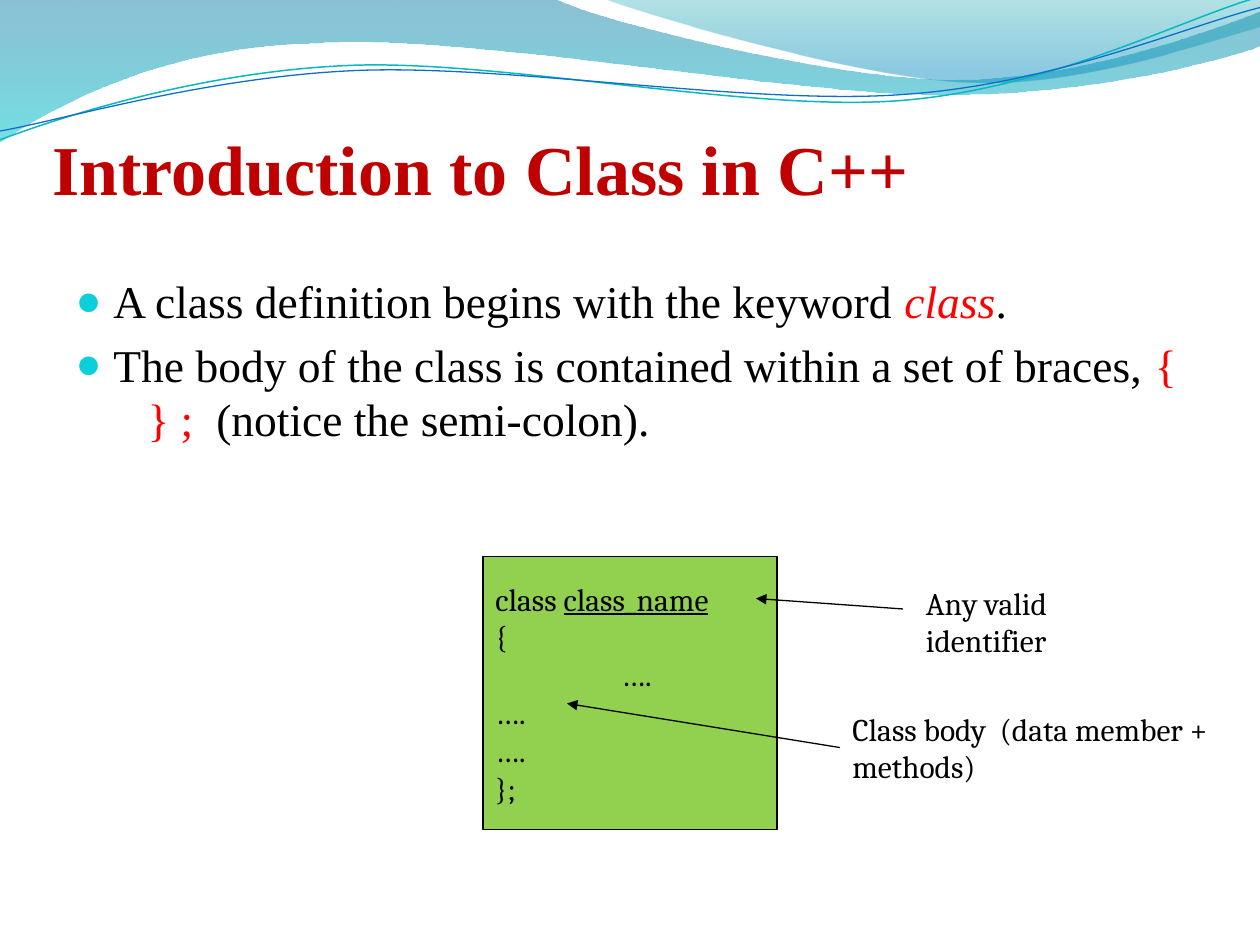
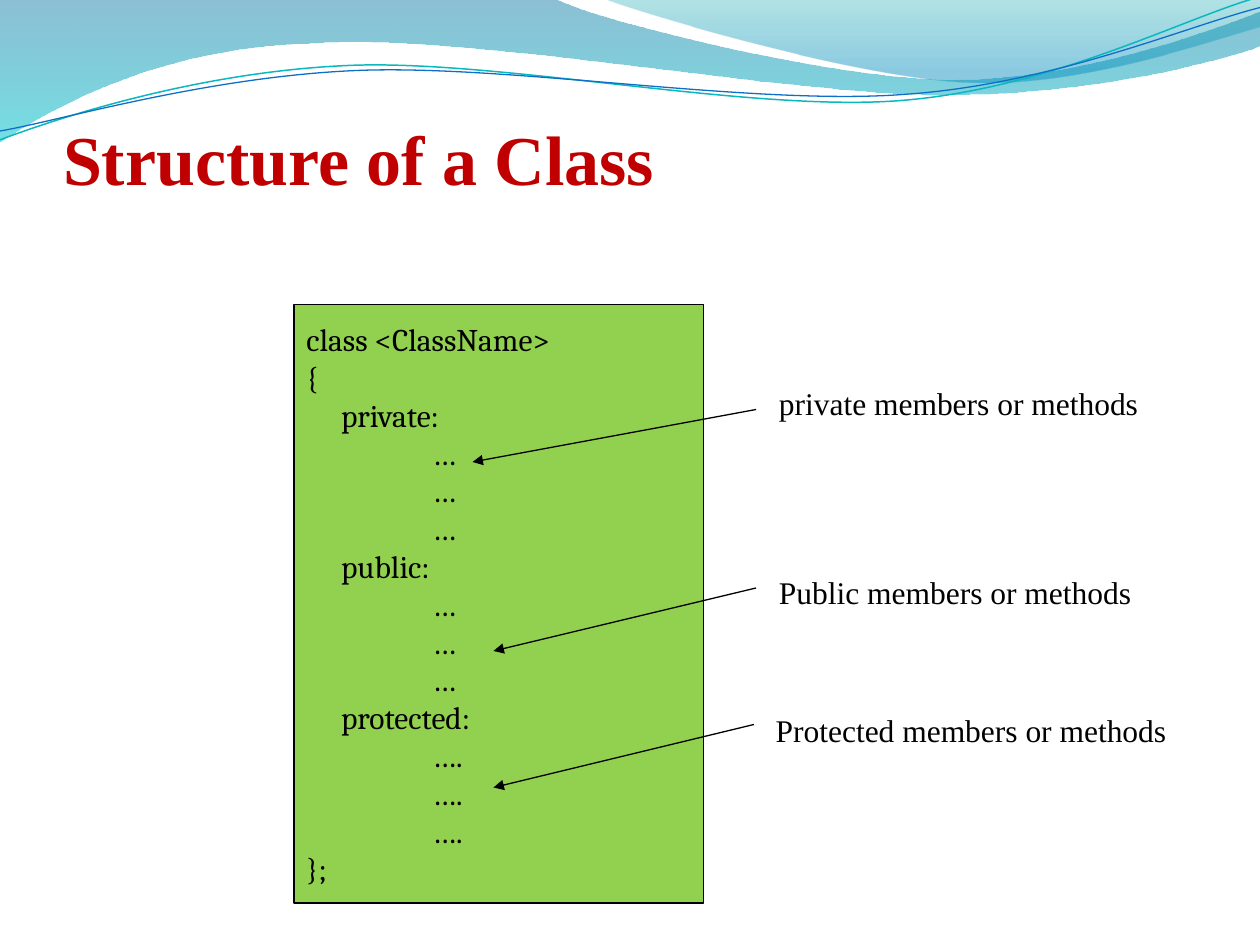
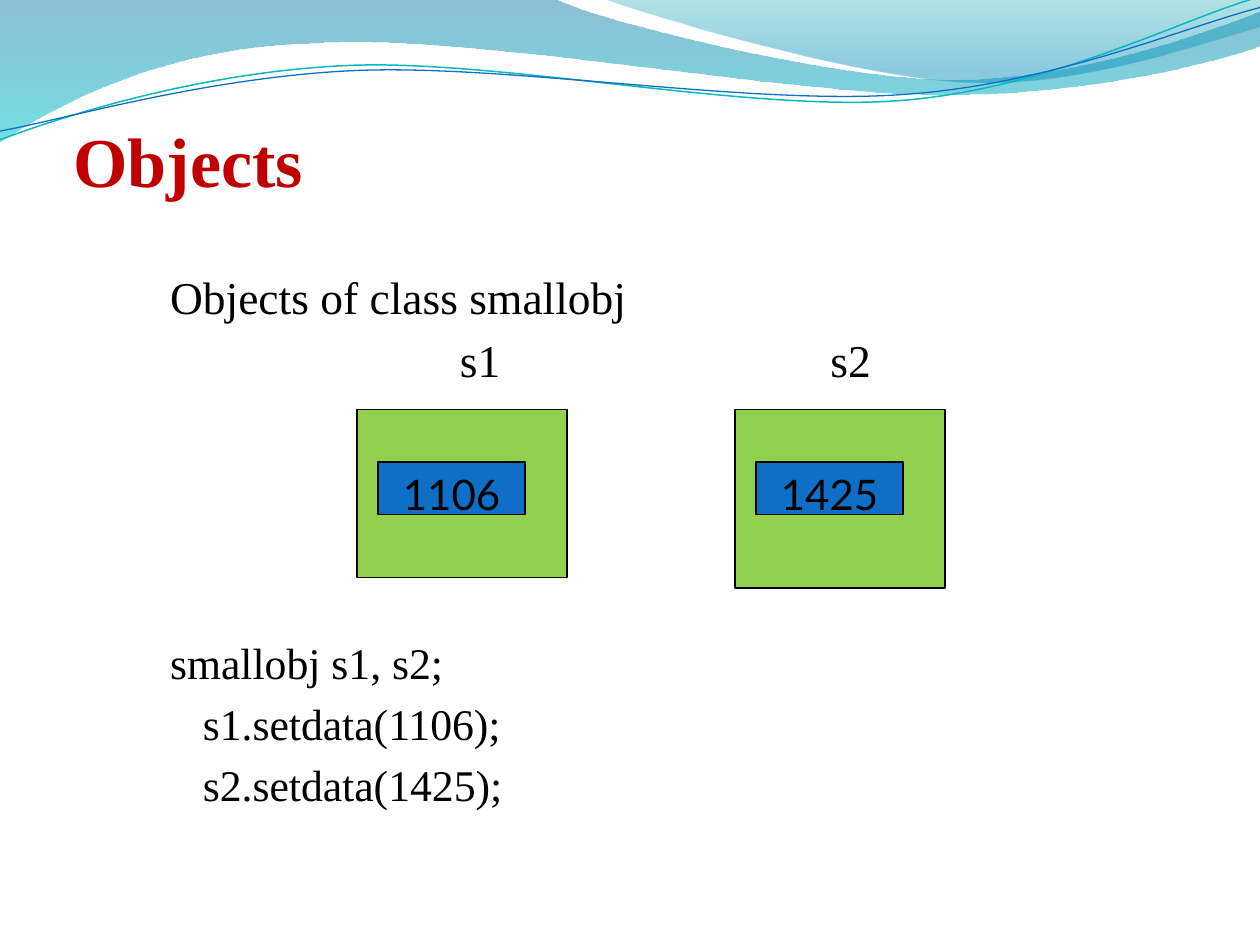
from typing import NamedTuple, Optional

from lxml import etree
from pptx import Presentation
from pptx.dml.color import RGBColor
from pptx.enum.shapes import MSO_CONNECTOR as Connector, MSO_SHAPE as Preset
from pptx.enum.text import MSO_ANCHOR as Anchor, MSO_AUTO_SIZE as AutoSize, PP_ALIGN as Align
from pptx.oxml.ns import qn
from pptx.util import Emu, Inches, Pt

# Shared look
SERIF, CODE_FONT, NUMBER_FONT = "Times New Roman", "Cambria", "Lato"
BLACK, WHITE, RED, TITLE_RED = "000000", "FFFFFF", "FF0000", "C00000"
GREEN, BLUE, TEAL, AQUA = "92D050", "0F6FC6", "0AB8BF", "0BD0D9"
CELL = Inches(1) // 12  # the slide is a grid of 120 columns by 90 rows
COLUMNS, ROWS = 120, 90


class Area(NamedTuple):
    """Column, row, width and height in grid cells."""
    column: float
    row: float
    width: float
    height: float


class Style(NamedTuple):
    size: float
    font: str = SERIF
    color: str = BLACK
    bold: bool = False
    italic: bool = False
    underline: bool = False


class Wave(NamedTuple):
    """Segments hold one point (line) or three points (curve), in inches."""
    start: tuple
    segments: list
    stops: tuple = ()  # position, colour, opacity in percent
    line: Optional[str] = None
    line_width: float = 0


class Label(NamedTuple):
    text: str
    area: Area
    font: str


class Arrow(NamedTuple):
    start: tuple
    end: tuple


class Box(NamedTuple):
    area: Area
    fill: str
    line: str = BLACK
    line_width: float = 0.75


class Line(NamedTuple):
    """A body paragraph: (text, style) runs, indents and tab size in inches."""
    runs: list
    left: float = 0
    hanging: float = 0
    tab_size: float = 1
    bullet: bool = False


WAVES = [
    Wave((0, 0), [
        (4.4, -0.01), (4.76, 0.17, 6.64, 0.63, 7.58, 0.63), (8.53, 0.63, 9.58, 0.26, 10, 0.09),
        (10.01, 0.36), (9.83, 0.44, 8.7, 0.76, 7.46, 0.75), (6.22, 0.75, 3.82, 0.28, 2.57, 0.34),
        (1.29, 0.36, 0.46, 0.83, -0.01, 1.13)],
        stops=((0, "0074A1", 45), (1, "00C6CF", 55))),
    Wave((4.79, -0.01), [
        (5.09, 0.11, 6.82, 0.62, 7.69, 0.65), (8.56, 0.69, 9.61, 0.32, 10, 0.21), (10, 0)],
        stops=((0, "00A1A9", 30), (0.8, "008BBF", 45))),
    Wave((0, 1.11), [
        (0.48, 0.93, 1.58, 0.57, 2.77, 0.52), (3.95, 0.47, 5.93, 0.89, 7.13, 0.8),
        (8.33, 0.71, 9.38, 0.15, 9.98, -0.02)], line=TEAL, line_width=0.85),
    Wave((0, 1.04), [
        (0.47, 0.96, 1.64, 0.61, 2.83, 0.56), (4.03, 0.51, 5.97, 0.84, 7.17, 0.75),
        (8.36, 0.67, 9.41, 0.21, 10, 0.06)], line=BLUE, line_width=0.75),
]


# Helpers
def rgb(color: str) -> RGBColor:
    return RGBColor.from_string(color)


def cells(*values: float) -> list:
    return [Emu(round(value * CELL)) for value in values]


def add_element(parent, tag: str, **attributes):
    return etree.SubElement(parent, qn(tag), attributes)


def format_run(run, style: Style) -> None:
    font = run.font
    font.name, font.size = style.font, Pt(style.size)
    font.bold, font.italic, font.underline = style.bold, style.italic, style.underline
    font.color.rgb = rgb(style.color)


def write(text_frame, text: str, style: Style, align=Align.LEFT) -> None:
    text_frame.text = text
    for paragraph in text_frame.paragraphs:
        paragraph.alignment = align
        for run in paragraph.runs:
            format_run(run, style)


def set_tab_size(paragraph, inches: float) -> None:
    paragraph._p.get_or_add_pPr().set("defTabSz", str(Inches(inches)))


def place(shape, area: Area) -> None:
    shape.left, shape.top, shape.width, shape.height = cells(*area)


# Waves on the slide master
def bend_segments(shape, segments: list) -> None:
    """Turn every three straight steps of a curved segment into one curve."""
    steps = iter(list(shape.element.iter(qn("a:lnTo"))))
    for segment in segments:
        group = [next(steps) for _ in range(len(segment) // 2)]
        if len(group) == 3:
            curve = etree.Element(qn("a:cubicBezTo"))
            group[0].addprevious(curve)
            for step in group:
                curve.append(step[0])
                step.getparent().remove(step)


def draw_wave(slide, wave: Wave):
    scaled = [[value * 1000 for value in segment] for segment in wave.segments]
    points = [point for segment in scaled for point in zip(segment[::2], segment[1::2])]
    builder = slide.shapes.build_freeform(
        *(value * 1000 for value in wave.start), scale=Inches(1) / 1000)
    builder.add_line_segments(points, close=bool(wave.stops))
    shape = builder.convert_to_shape()
    bend_segments(shape, wave.segments)
    shape.shadow.inherit = False
    if wave.line:
        shape.fill.background()
        shape.line.color.rgb = rgb(wave.line)
        shape.line.width = Pt(wave.line_width)
        return shape
    shape.fill.gradient()
    shape.fill.gradient_angle = 270
    for stop, (position, color, _) in zip(shape.fill.gradient_stops, wave.stops):
        stop.position, stop.color.rgb = position, rgb(color)
    for color_element, (_, _, opacity) in zip(shape.element.iter(qn("a:srgbClr")), wave.stops):
        add_element(color_element, "a:alpha", val=str(opacity * 1000))
    shape.line.fill.background()
    return shape


def put_waves_on_master(presentation, slide) -> None:
    master_tree = presentation.slide_master.shapes.element
    for index, wave in enumerate(WAVES):
        element = draw_wave(slide, wave).element
        element.nvSpPr.cNvPr.set("id", str(100 + index))
        master_tree.insert(2 + index, element)


# Slide parts
def add_titled_slide(presentation, layout: int, title: str, area: Area):
    slide = presentation.slides.add_slide(presentation.slide_layouts[layout])
    shape = slide.shapes.title
    place(shape, area)
    frame = shape.text_frame
    write(frame, title, Style(40, color=TITLE_RED, bold=True))
    frame.auto_size = AutoSize.NONE
    frame.vertical_anchor = Anchor.BOTTOM
    frame.margin_left = frame.margin_right = frame.margin_bottom = 0
    frame.margin_top = Inches(0.05)
    return slide


def fill_body(slide, area: Area, lines: list) -> list:
    shape = slide.placeholders[1]
    place(shape, area)
    frame = shape.text_frame
    frame.auto_size = AutoSize.NONE
    for index, line in enumerate(lines):
        paragraph = frame.add_paragraph() if index else frame.paragraphs[0]
        set_tab_size(paragraph, line.tab_size)
        properties = paragraph._p.pPr
        properties.set("marL", str(Inches(line.left)))
        properties.set("indent", str(-Inches(line.hanging)))
        if line.bullet:
            add_element(add_element(properties, "a:buClr"), "a:srgbClr", val=AQUA)
            add_element(properties, "a:buSzPct", val="95000")
            add_element(properties, "a:buChar", char="●")
        else:
            add_element(properties, "a:buNone")
        for text, style in line.runs:
            run = paragraph.add_run()
            run.text = text
            format_run(run, style)
    frame.paragraphs[0].space_before = Pt(0)
    return list(frame.paragraphs)


def add_box(slide, box: Box):
    shape = slide.shapes.add_shape(Preset.RECTANGLE, *cells(*box.area))
    shape.shadow.inherit = False
    shape.fill.solid()
    shape.fill.fore_color.rgb = rgb(box.fill)
    shape.line.color.rgb = rgb(box.line)
    shape.line.width = Pt(box.line_width)
    return shape


def add_code(slide, area: Area, code: str):
    frame = add_box(slide, Box(area, GREEN)).text_frame
    frame.vertical_anchor = Anchor.MIDDLE
    write(frame, code, Style(18, CODE_FONT))
    for paragraph in frame.paragraphs:
        set_tab_size(paragraph, 1)
    return frame


def add_label(slide, label: Label):
    shape = slide.shapes.add_textbox(*cells(*label.area))
    shape.text_frame.word_wrap = True
    write(shape.text_frame, label.text, Style(18, label.font))
    return shape


def add_arrow(slide, arrow: Arrow, source=None) -> None:
    connector = slide.shapes.add_connector(
        Connector.STRAIGHT, *cells(*arrow.start, *arrow.end))
    if source is not None:
        connector.begin_connect(source, 1)
    connector.line.color.rgb = rgb(BLACK)
    connector.line.width = Pt(0.75)
    add_element(connector.line._get_or_add_ln(), "a:tailEnd", type="triangle")
    add_element(connector.element.spPr, "a:effectLst")


# Slides
def build_introduction(presentation):
    slide = add_titled_slide(presentation, 1, "Introduction to Class in C++", Area(5, 5, 108, 15))
    plain = Style(26)
    red = plain._replace(color=RED)
    bullets = [
        [("A class definition begins with the keyword ", plain),
         ("class", red._replace(italic=True)), (".", plain)],
        [("The body of the class is contained within a set of braces, ", plain),
         ("{    } ;", red), ("  (notice the semi-colon).", plain)],
    ]
    fill_body(slide, Area(6, 25.4, 108, 57.6),
              [Line(runs, left=0.3, hanging=0.3, bullet=True) for runs in bullets])
    frame = add_code(slide, Area(46, 53, 28, 26), "class \n{\n\t….\n….\n….\n};")
    name = frame.paragraphs[0].add_run()
    name.text = "class_name"
    format_run(name, Style(18, CODE_FONT, underline=True))
    body_label = add_label(slide, Label("Class body  (data member + methods)",
                                        Area(80, 67, 40, 8.4), CODE_FONT))
    add_label(slide, Label("Any valid identifier", Area(87, 55, 26, 8.4), CODE_FONT))
    add_arrow(slide, Arrow((80, 71), (54, 67)), body_label)
    add_arrow(slide, Arrow((86, 58), (72, 57)))
    return slide


def build_structure(presentation) -> None:
    slide = add_titled_slide(presentation, 5, "Structure of a Class", Area(6, 4, 108, 15))
    sections = (("private", "…"), ("public", "…"), ("protected", "…."))
    lines = ["class <ClassName>", "{"]
    for access, dots in sections:
        lines += [f"     {access}:"] + [f"\t{dots}"] * 3
    add_code(slide, Area(28, 29, 39, 57), "\n".join(lines + ["};"]))
    for text, row in (("private members or methods", 36), ("Public members or methods", 54)):
        add_label(slide, Label(text, Area(73, row, 40, 4.8), SERIF))
    protected = add_box(slide, Box(Area(72, 67, 41, 5), WHITE, WHITE, 2))
    protected.text_frame.vertical_anchor = Anchor.MIDDLE
    write(protected.text_frame, "Protected members or methods", Style(18), Align.CENTER)
    for arrow in (Arrow((72, 39), (45, 44)), Arrow((72, 56), (47, 62)),
                  Arrow((71.8, 69), (47, 75))):
        add_arrow(slide, arrow)


def build_objects(presentation) -> None:
    slide = add_titled_slide(presentation, 1, "Objects", Area(7, 8, 108, 11.2))
    text, code = Style(26), Style(25)
    paragraphs = fill_body(slide, Area(15, 25, 102, 58), [
        Line([("Objects of class smallobj", text)]),
        Line([("s1\ts2", text)], left=2.3, tab_size=2.94),
        Line([("smallobj s1, s2;", code)]),
        Line([("   s1.setdata(1106);", code)]),
        Line([("   s2.setdata(1425);", code)]),
    ])
    paragraphs[2].space_before = Pt(142)  # room for the object boxes
    for column, height, value in ((34, 16, "1106"), (70, 17, "1425")):
        add_box(slide, Box(Area(column, 39, 20, height), GREEN))
        slot = add_box(slide, Box(Area(column + 2, 44, 14, 5), BLUE))
        slot.text_frame.vertical_anchor = Anchor.TOP
        write(slot.text_frame, value, Style(24, NUMBER_FONT), Align.CENTER)


def main() -> None:
    presentation = Presentation()
    presentation.slide_width, presentation.slide_height = cells(COLUMNS, ROWS)
    introduction = build_introduction(presentation)
    put_waves_on_master(presentation, introduction)
    build_structure(presentation)
    build_objects(presentation)
    presentation.save("out.pptx")


if __name__ == "__main__":
    main()
